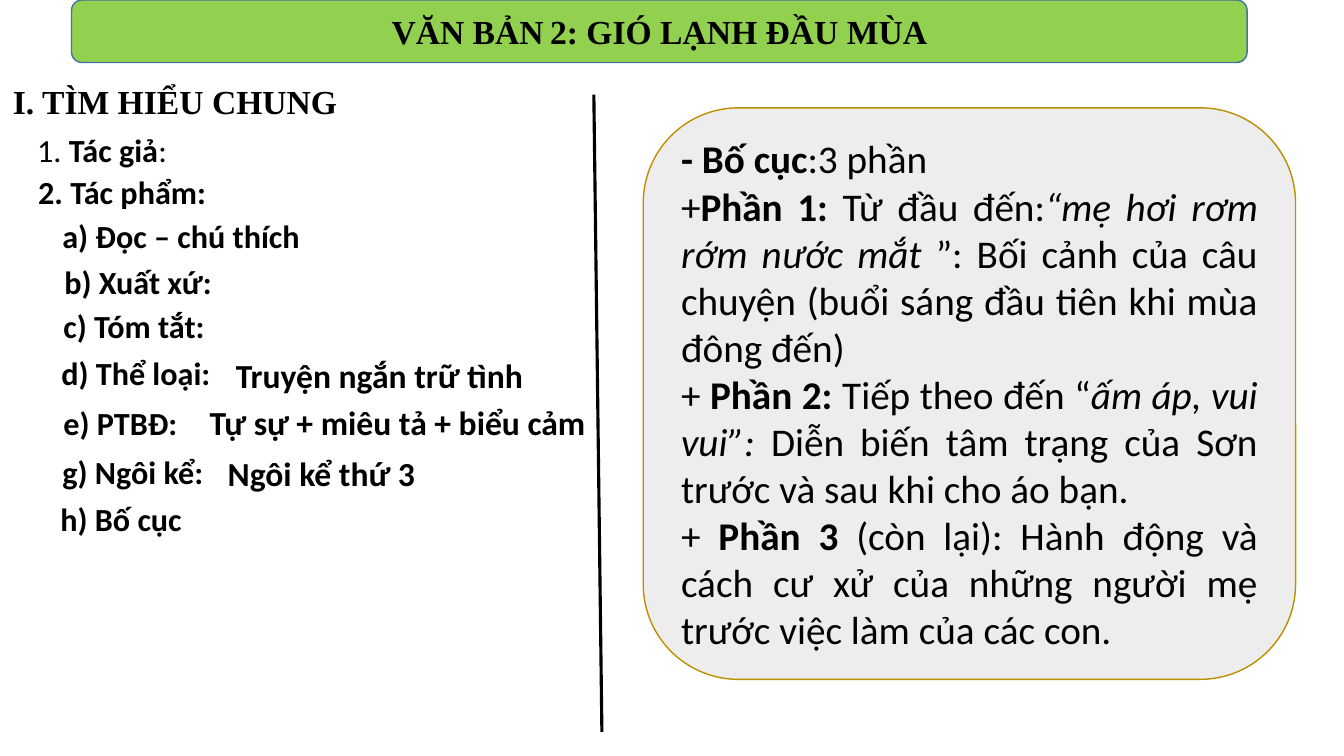
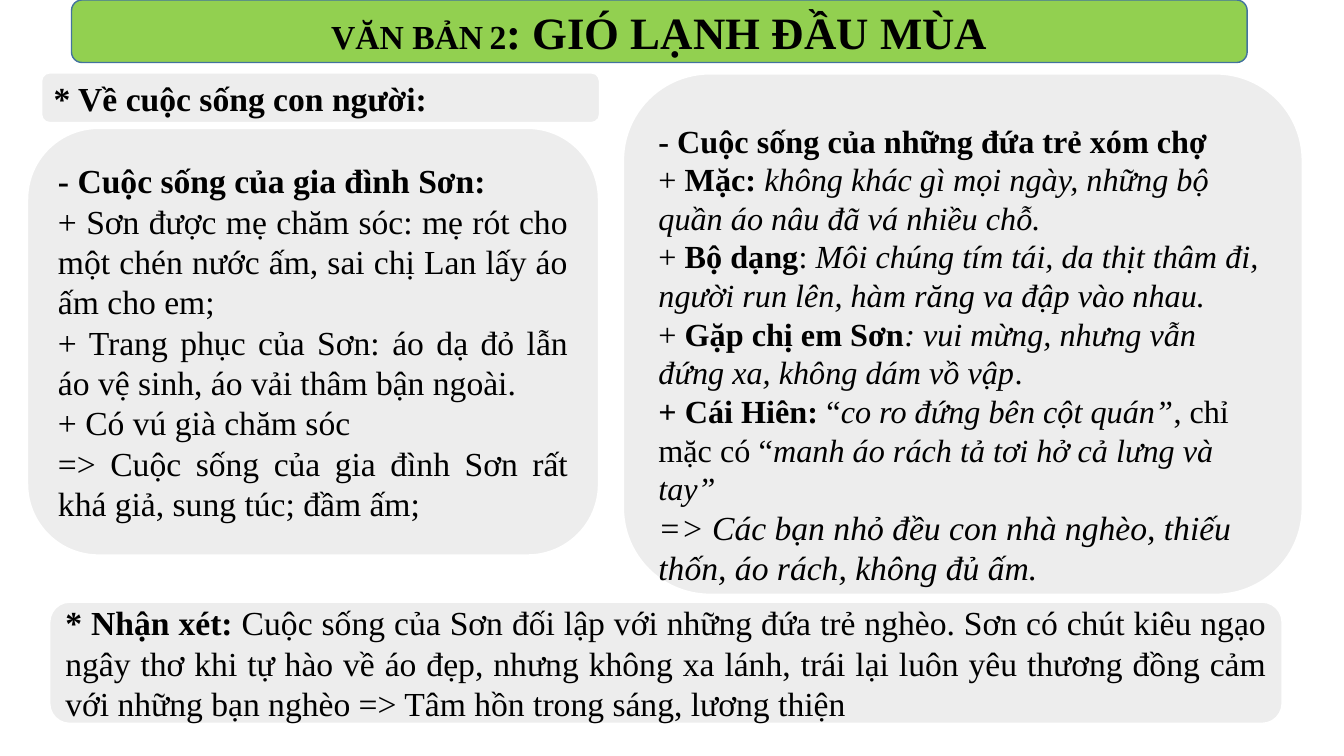
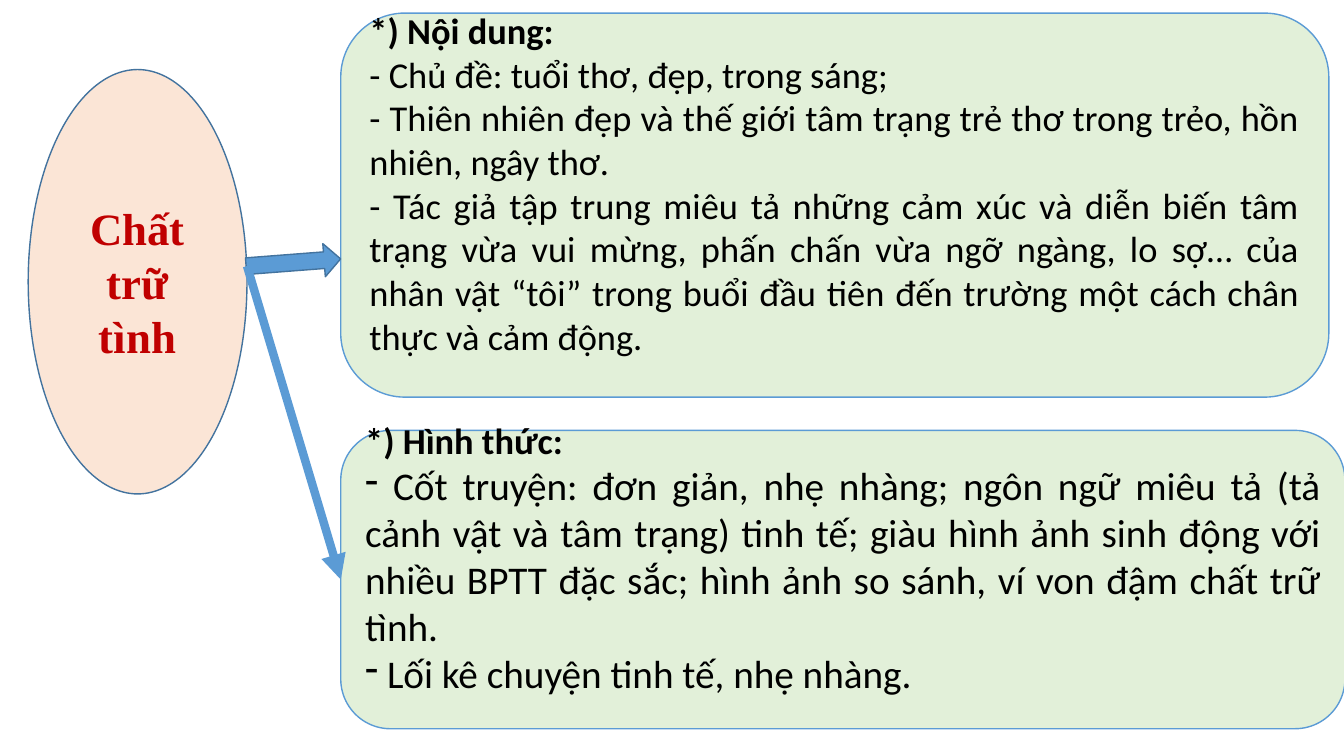
from typing import NamedTuple

from lxml import etree
from pptx import Presentation
from pptx.dml.color import RGBColor
from pptx.enum.shapes import MSO_CONNECTOR, MSO_SHAPE
from pptx.enum.text import MSO_ANCHOR, PP_ALIGN
from pptx.oxml.ns import qn
from pptx.util import Inches, Pt

ROUNDED = MSO_SHAPE.ROUNDED_RECTANGLE
ELLIPSE = MSO_SHAPE.OVAL
RIGHT_ARROW = MSO_SHAPE.RIGHT_ARROW
STRAIGHT = MSO_CONNECTOR.STRAIGHT
MIDDLE = MSO_ANCHOR.MIDDLE
LEFT, CENTER, JUSTIFY = PP_ALIGN.LEFT, PP_ALIGN.CENTER, PP_ALIGN.JUSTIFY
LEFT_SIDE = 1

SERIF = "Times New Roman"
SANS = "Calibri"
BLACK = RGBColor(0x00, 0x00, 0x00)
WHITE = RGBColor(0xFF, 0xFF, 0xFF)
BANNER_GREEN = RGBColor(0x92, 0xD0, 0x50)
NAVY = RGBColor(0x43, 0x73, 0x9E)
GREY = RGBColor(0xED, 0xED, 0xED)
GOLD = RGBColor(0xBD, 0x8E, 0x00)
PEACH = RGBColor(0xFB, 0xE5, 0xD6)
RED = RGBColor(0xC0, 0x00, 0x00)
PALE_GREEN = RGBColor(0xE2, 0xF0, 0xD9)
BLUE = RGBColor(0x5B, 0x9B, 0xD5)


class Part(NamedTuple):
    """A stretch of text; style holds "b" for bold and "i" for italic."""
    text: str
    style: str = ""
    size: float | None = None


class Look(NamedTuple):
    font: str
    size: float
    align: PP_ALIGN = LEFT
    color: RGBColor = BLACK


def bold(text, size=None):
    return [Part(text, "b", size)]


def plain(text, size=None):
    return [Part(text, "", size)]


def set_style(font, part):
    if "b" in part.style:
        font.bold = True
    if "i" in part.style:
        font.italic = True


def write(frame, paragraphs, look):
    """Fill a text frame; each paragraph is a list of Parts."""
    frame.word_wrap = True
    for index, parts in enumerate(paragraphs):
        paragraph = frame.add_paragraph() if index else frame.paragraphs[0]
        paragraph.alignment = look.align
        paragraph.font.name = look.font
        paragraph.font.color.rgb = look.color
        agree = len({(part.style, part.size) for part in parts}) == 1
        paragraph.font.size = Pt(agree and parts[0].size or look.size)
        if agree:
            set_style(paragraph.font, parts[0])
        for part in parts:
            run = paragraph.add_run()
            run.text = part.text
            if not agree:
                set_style(run.font, part)
                if part.size:
                    run.font.size = Pt(part.size)


def add_box(slide, box, paragraphs, look, fill, line, line_width=1, kind=ROUNDED):
    shape = slide.shapes.add_shape(kind, *map(Inches, box))
    shape.shadow.inherit = False
    shape.fill.solid()
    shape.fill.fore_color.rgb = fill
    shape.line.color.rgb = line
    shape.line.width = Pt(line_width)
    shape.text_frame.vertical_anchor = MIDDLE
    write(shape.text_frame, paragraphs, look)
    return shape


def add_label(slide, box, parts, look):
    label = slide.shapes.add_textbox(*map(Inches, box))
    write(label.text_frame, [parts], look)
    return label


def add_line(slide, start, end, color, width):
    line = slide.shapes.add_connector(STRAIGHT, *map(Inches, start + end))
    line.line.color.rgb = color
    line.line.width = Pt(width)
    etree.SubElement(line._element.spPr, qn("a:effectLst"))
    return line


def add_arrowhead(connector):
    outline = connector.line._get_or_add_ln()
    etree.SubElement(outline, qn("a:tailEnd"), type="triangle")


def add_dash_bullet(paragraph):
    properties = paragraph._p.get_or_add_pPr()
    properties.set("marL", "0")
    properties.set("indent", "0")
    bullet = etree.Element(qn("a:buChar"), char="-")
    properties.find(qn("a:defRPr")).addprevious(bullet)


def add_banner(slide, number, name, name_size):
    parts = [Part("VĂN BẢN", "b", 24), Part(" ", "b", 18),
             Part(number, "b", 24), Part(name, "b", name_size)]
    add_box(slide, (0.71, 0, 11.66, 0.62), [parts],
            Look(SERIF, 24, CENTER), BANNER_GREEN, NAVY)


def build_overview(slide):
    add_banner(slide, "2", ": GIÓ LẠNH ĐẦU MÙA", 24)
    add_label(slide, (0.03, 0.75, 3.46, 0.5), bold("I. TÌM HIỂU CHUNG"), Look(SERIF, 24))
    author = add_label(slide, (0.27, 1.19, 2.01, 0.55),
                       [Part("1. "), Part("Tác giả", "b"), Part(":")],
                       Look(SANS, 23, JUSTIFY))
    author.text_frame.paragraphs[0].line_spacing = 1.15
    add_line(slide, (5.97, 7.26), (5.89, 0.94), BLACK, 2.25)

    headings = [
        (0.28, 1.66, 3.28, "2. Tác phẩm:"),
        (0.52, 2.1, 2.7, "a) Đọc – chú thích"),
        (0.54, 2.55, 1.75, "b) Xuất xứ:"),
        (0.53, 2.99, 1.69, "c) Tóm tắt:"),
        (0.51, 3.46, 1.77, "d) Thể loại:"),
        (0.53, 3.95, 1.49, "e) PTBĐ:"),
        (0.52, 4.44, 1.76, "g) Ngôi kể:"),
        (0.5, 4.9, 5.48, "h) Bố cục"),
    ]
    answers = [
        (2.24, 3.47, 3.72, "Truyện ngắn trữ tình"),
        (1.98, 3.94, 4.23, "Tự sự + miêu tả + biểu cảm"),
        (2.16, 4.44, 3.56, "Ngôi kể thứ 3"),
    ]
    for entries, size in ((headings, 23), (answers, 24)):
        for left, top, width, text in entries:
            add_label(slide, (left, top, width, 0.5), bold(text), Look(SANS, size))

    layout = [
        [Part("- Bố cục", "b"), Part(":3 phần")],
        [Part("+"), Part("Phần 1: ", "b"), Part("Từ đầu đến:"),
         Part("“mẹ hơi rơm rớm nước mắt", "i"),
         Part(" ”: Bối cảnh của câu chuyện (buổi sáng đầu tiên khi mùa đông đến)")],
        [Part("+ "), Part("Phần 2: ", "b"), Part("Tiếp theo đến “"),
         Part("ấm áp, vui vui”: ", "i"),
         Part("Diễn biến tâm trạng của Sơn trước và sau khi cho áo bạn.")],
        [Part("+ "), Part("Phần 3", "b"),
         Part(" (còn lại): Hành động và cách cư xử của những người mẹ "
              "trước việc làm của các con.")],
    ]
    add_box(slide, (6.38, 1.07, 6.47, 5.67), layout, Look(SANS, 28, JUSTIFY), GREY, GOLD)


def build_lives(slide):
    add_banner(slide, "2", ": GIÓ LẠNH ĐẦU MÙA", 32)

    def add_panel(box, paragraphs, align=JUSTIFY, size=24):
        return add_box(slide, box, paragraphs, Look(SERIF, size, align), GREY, WHITE, 1.5)

    add_panel((0.41, 0.72, 5.54, 0.5), [bold("* Về cuộc sống con người:")], LEFT)
    add_panel((0.27, 1.27, 5.67, 4.24), [
        bold("- Cuộc sống của gia đình Sơn:"),
        plain("+ Sơn được mẹ chăm sóc: mẹ rót cho một chén nước ấm, "
              "sai chị Lan lấy áo ấm cho em;"),
        plain("+ Trang phục của Sơn: áo dạ đỏ lẫn áo vệ sinh, áo vải thâm bận ngoài."),
        plain("+ Có vú già chăm sóc"),
        plain("=> Cuộc sống của gia đình Sơn rất khá giả, sung túc; đầm ấm;"),
    ])
    market_children = add_panel((6.18, 0.73, 6.74, 5.17), [
        bold("- Cuộc sống của những đứa trẻ xóm chợ"),
        [Part("+ "), Part("Mặc: ", "b"),
         Part("không khác gì mọi ngày, những bộ quần áo nâu đã vá nhiều chỗ.", "i")],
        [Part("+ "), Part("Bộ dạng", "b"), Part(": "),
         Part("Môi chúng tím tái, da thịt thâm đi, người run lên, "
              "hàm răng va đập vào nhau.", "i")],
        [Part("+ "), Part("Gặp chị em Sơn", "b"),
         Part(": vui mừng, nhưng vẫn đứng xa, không dám vồ vập", "i"), Part(".")],
        [Part("+ Cái Hiên: ", "b"), Part("“"), Part("co ro đứng bên cột quán”", "i"),
         Part(", chỉ mặc có “"), Part("manh áo rách tả tơi hở cả lưng và tay”", "i")],
        [Part("=> Các bạn nhỏ đều con nhà nghèo, thiếu thốn, áo rách, "
              "không đủ ấm.", "i", 24)],
    ], LEFT, 23)
    market_children.text_frame.margin_top = Inches(0.45)
    add_panel((0.49, 5.97, 12.23, 1.21), [[
        Part("* Nhận xét: ", "b"),
        Part("Cuộc sống của Sơn đối lập với những đứa trẻ nghèo. Sơn có chút kiêu ngạo "
             "ngây thơ khi tự hào về áo đẹp, nhưng không xa lánh, trái lại luôn yêu thương "
             "đồng cảm với những bạn nghèo => Tâm hồn trong sáng, lương thiện"),
    ]])


def build_lyricism(slide):
    def add_panel(box, paragraphs):
        panel = add_box(slide, box, paragraphs, Look(SANS, 26, JUSTIFY), PALE_GREEN, BLUE)
        panel.text_frame.margin_bottom = Inches(0.49)
        return panel

    add_box(slide, (0.28, 0.69, 2.17, 4.21), [bold("Chất trữ tình")],
            Look(SERIF, 32, CENTER, RED), PEACH, NAVY, kind=ELLIPSE)
    add_panel((3.38, 0.13, 9.8, 3.81), [
        bold("*) Nội dung:"),
        plain("- Chủ đề: tuổi thơ, đẹp, trong sáng;"),
        plain("- Thiên nhiên đẹp và thế giới tâm trạng trẻ thơ trong trẻo, "
              "hồn nhiên, ngây thơ."),
        plain("- Tác giả tập trung miêu tả những cảm xúc và diễn biến tâm trạng vừa "
              "vui mừng, phấn chấn vừa ngỡ ngàng, lo sợ… của nhân vật “tôi” trong "
              "buổi đầu tiên đến trường một cách chân thực và cảm động."),
    ])
    content_arrow = add_box(slide, (2.44, 2.44, 0.94, 0.33), [], Look(SANS, 18),
                            BLUE, NAVY, kind=RIGHT_ARROW)
    content_arrow.rotation = -4.4
    form = add_panel((3.38, 4.27, 9.96, 2.96), [
        bold("*) Hình thức:"),
        plain(" Cốt truyện: đơn giản, nhẹ nhàng; ngôn ngữ miêu tả (tả cảnh vật và "
              "tâm trạng) tinh tế; giàu hình ảnh sinh động với nhiều BPTT đặc sắc; "
              "hình ảnh so sánh, ví von đậm chất trữ tình.", 28),
        plain(" Lối kê chuyện tinh tế, nhẹ nhàng.", 28),
    ])
    for paragraph in form.text_frame.paragraphs[1:]:
        add_dash_bullet(paragraph)
    form_arrow = add_line(slide, (2.45, 2.64), (3.38, 5.75), BLUE, 6)
    form_arrow.end_connect(form, LEFT_SIDE)
    add_arrowhead(form_arrow)


def main():
    presentation = Presentation()
    presentation.slide_width = Inches(13.33)
    presentation.slide_height = Inches(7.5)
    blank = presentation.slide_layouts[6]
    for build in (build_overview, build_lives, build_lyricism):
        build(presentation.slides.add_slide(blank))
    presentation.save("out.pptx")


if __name__ == "__main__":
    main()
